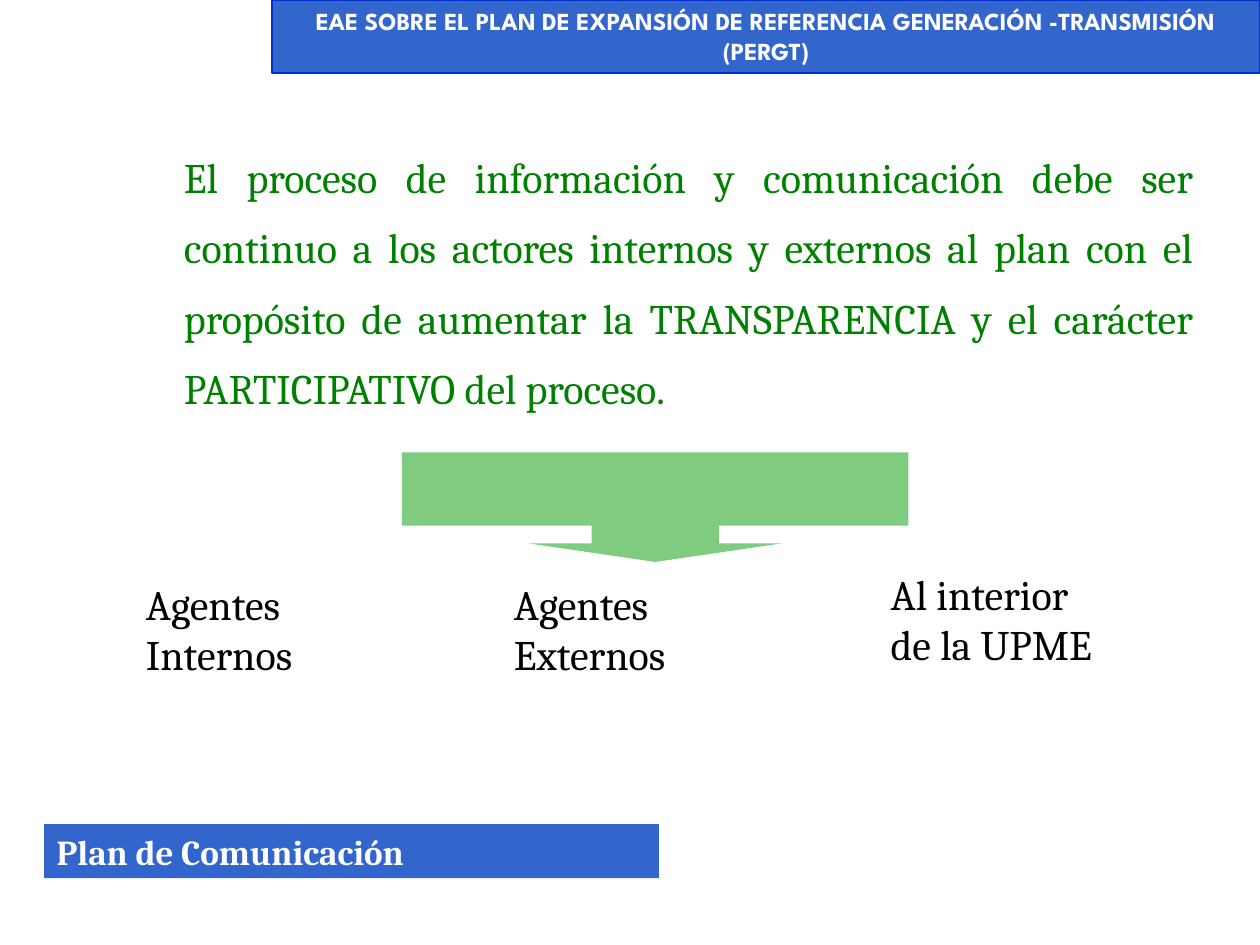
from lxml.etree import SubElement
from pptx import Presentation
from pptx.dml.color import RGBColor
from pptx.enum.shapes import MSO_SHAPE
from pptx.enum.text import MSO_ANCHOR, MSO_AUTO_SIZE, PP_ALIGN
from pptx.oxml.ns import qn
from pptx.util import Inches, Pt

COLORS = {
    "band": "3366CC",
    "band_line": "0033CC",
    "white": "FFFFFF",
    "body": "008000",
    "label": "000000",
    "arrow": "009900",
}
SERIF = "Cambria"
DISPLAY = "League Spartan"


def color(name):
    return RGBColor.from_string(COLORS[name])


def set_attributes(target, values):
    for name, value in values.items():
        setattr(target, name, value)


class SlideBuilder:
    """Holds the shared style and the current slide."""

    frame_format = {
        "word_wrap": True,
        "auto_size": MSO_AUTO_SIZE.NONE,
        "margin_left": Inches(0.1),
        "margin_right": Inches(0.1),
        "margin_top": Inches(0.05),
        "margin_bottom": Inches(0.05),
    }

    def __init__(self, slide):
        self.slide = slide

    def format_text(self, shape, text, font_format, font_color,
                    anchor=MSO_ANCHOR.TOP, **paragraph_format):
        frame = shape.text_frame
        set_attributes(frame, self.frame_format)
        frame.vertical_anchor = anchor
        paragraph = frame.paragraphs[0]
        paragraph.text = text
        set_attributes(paragraph, {"alignment": PP_ALIGN.LEFT,
                                   "space_before": Pt(0), **paragraph_format})
        font = paragraph.runs[0].font
        set_attributes(font, font_format)
        font.color.rgb = color(font_color)
        return paragraph

    def place(self, shape, box):
        names = ("left", "top", "width", "height")
        set_attributes(shape, dict(zip(names, map(Inches, box))))

    def fill(self, shape, fill_color):
        shape.fill.solid()
        shape.fill.fore_color.rgb = color(fill_color)

    def add_shape(self, kind, box, fill_color, line_color=None):
        shape = self.slide.shapes.add_shape(kind, *map(Inches, box))
        shape.shadow.inherit = False
        self.fill(shape, fill_color)
        if line_color:
            shape.line.color.rgb = color(line_color)
            shape.line.width = Pt(0.75)
        else:
            shape.line.fill.background()
        return shape

    def add_header(self, text, box):
        band = self.add_shape(MSO_SHAPE.RECTANGLE, box, "band", "band_line")
        self.format_text(band, text, {"name": DISPLAY, "size": Pt(14), "bold": True},
                         "white", alignment=PP_ALIGN.CENTER)

    def add_title(self, text, box):
        title = self.slide.shapes.title
        self.place(title, box)
        self.fill(title, "band")
        self.format_text(title, text, {"name": SERIF, "size": Pt(20), "bold": True},
                         "white", MSO_ANCHOR.MIDDLE)

    def add_body(self, text, box):
        body = self.slide.placeholders[1]
        self.place(body, box)
        paragraph = self.format_text(body, text, {"name": SERIF, "size": Pt(24)}, "body",
                                     alignment=PP_ALIGN.JUSTIFY, line_spacing=1.4)
        # Hanging indent without a bullet
        properties = paragraph._p.get_or_add_pPr()
        properties.set("marL", str(Inches(0.69)))
        properties.set("indent", str(Inches(-0.5)))
        SubElement(properties, qn("a:buNone"))

    def add_label(self, text, box):
        label = self.slide.shapes.add_textbox(*map(Inches, box))
        self.format_text(label, text, {"name": SERIF, "size": Pt(24)}, "label")

    def add_arrow(self, box, adjustments, opacity):
        arrow = self.add_shape(MSO_SHAPE.DOWN_ARROW_CALLOUT, box, "arrow")
        for index, value in enumerate(adjustments):
            arrow.adjustments[index] = value
        fill_element = arrow._element.spPr.find(qn("a:solidFill"))
        SubElement(fill_element[0], qn("a:alpha"), val=str(opacity * 1000))


def main():
    presentation = Presentation()
    presentation.slide_width = Inches(10)
    presentation.slide_height = Inches(7.5)
    slide = presentation.slides.add_slide(presentation.slide_layouts[1])
    builder = SlideBuilder(slide)

    # Header band and section title
    builder.add_header(
        "EAE SOBRE EL PLAN DE EXPANSIÓN DE REFERENCIA GENERACIÓN -TRANSMISIÓN (PERGT)",
        (2.16, 0, 7.84, 0.58))
    builder.add_title("Plan de Comunicación", (0.35, 6.54, 4.88, 0.43))

    # Main statement
    builder.add_body(
        "\tEl proceso de información y comunicación debe ser continuo a los actores "
        "internos y externos al plan con el propósito de aumentar la TRANSPARENCIA "
        "y el carácter PARTICIPATIVO del proceso.",
        (0.67, 0.99, 8.9, 3.45))

    # Audiences under the arrow
    for text, box in (
        ("Agentes Internos", (1.06, 4.54, 1.97, 0.9)),
        ("Agentes Externos", (3.98, 4.54, 1.81, 0.9)),
        ("Al interior de la UPME", (6.97, 4.46, 1.81, 1.3)),
    ):
        builder.add_label(text, box)
    builder.add_arrow((3.19, 3.59, 4.02, 0.87), (1.16, 1.16, 0.17, 0.67), opacity=50)

    presentation.save("out.pptx")


if __name__ == "__main__":
    main()
